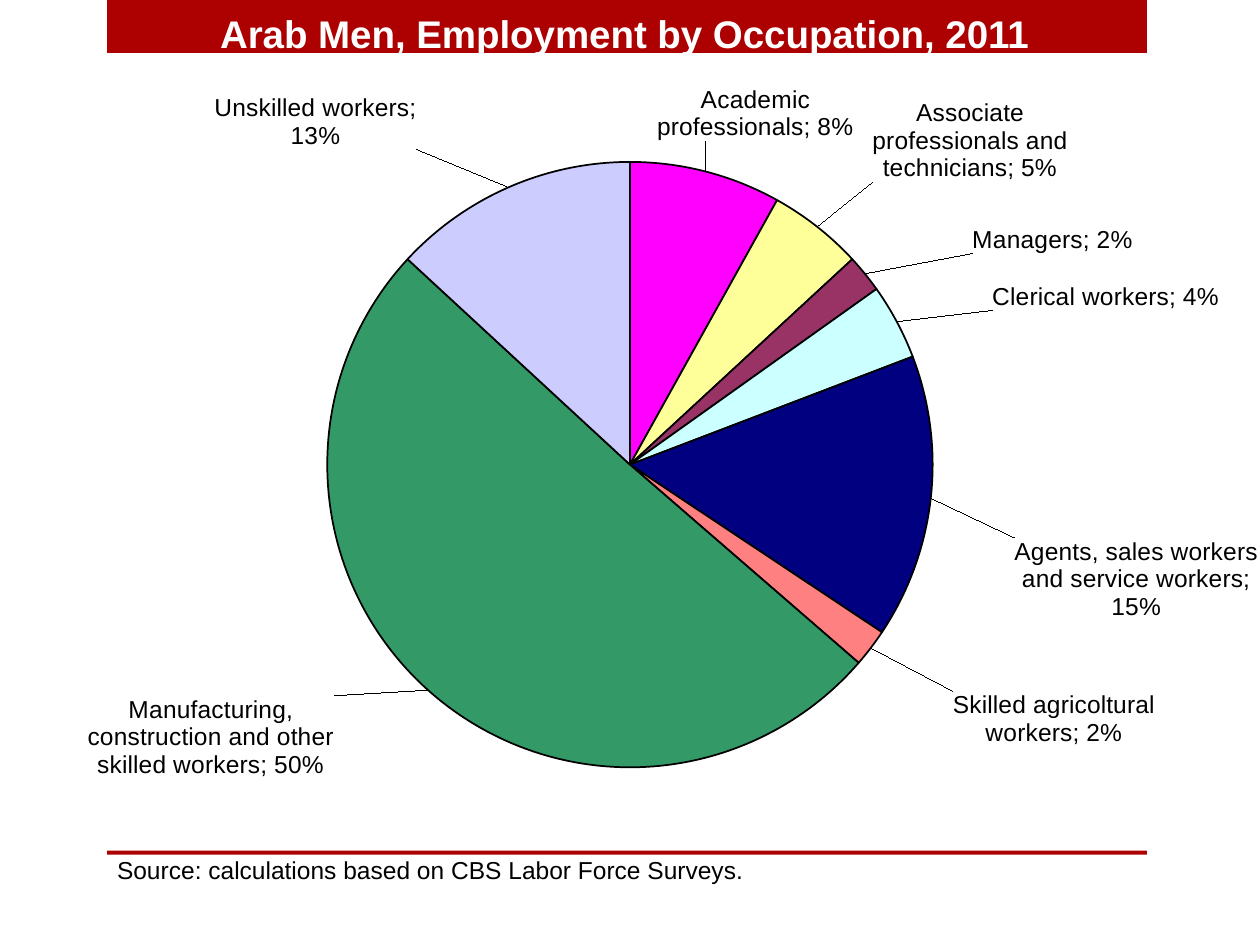
from dataclasses import dataclass

from lxml.etree import fromstring
from pptx import Presentation
from pptx.chart.data import CategoryChartData
from pptx.dml.color import RGBColor
from pptx.enum.chart import XL_CHART_TYPE, XL_LABEL_POSITION
from pptx.enum.shapes import MSO_SHAPE
from pptx.enum.text import PP_ALIGN
from pptx.util import Cm, Pt

FONT = "Arial"
RED, BLACK, WHITE = "AD0101", "000000", "FFFFFF"
NS = "http://schemas.openxmlformats.org/drawingml/2006/chart"


@dataclass
class Box:
    left: float
    top: float
    width: float
    height: float

    def place(self) -> tuple:
        return Cm(self.left), Cm(self.top), Cm(self.width), Cm(self.height)


@dataclass
class Slice:
    name: str
    share: float
    fill: str
    dx: float  # label shift, as part of the chart size
    dy: float


SLICES = [
    Slice("Academic professionals", 0.08, "FF00FF", -0.04, -0.03),
    Slice("Associate professionals and technicians", 0.05, "FFFF99", 0.04, -0.05),
    Slice("Managers", 0.02, "993366", 0.08, -0.02),
    Slice("Clerical workers", 0.04, "CCFFFF", 0.07, -0.01),
    Slice("Agents, sales workers and service workers", 0.15, "000080", 0.06, 0.05),
    Slice("Skilled agricoltural workers", 0.02, "FF8080", 0.06, 0.05),
    Slice("Manufacturing, construction and other skilled workers", 0.5, "339966", -0.07, 0),
    Slice("Unskilled workers", 0.13, "CCCCFF", -0.07, -0.04),
]


def color(code: str) -> RGBColor:
    return RGBColor.from_string(code)


def style(font, size: int, code: str, bold: bool = False) -> None:
    font.name, font.size, font.bold = FONT, Pt(size), bold
    font.color.rgb = color(code)


def node(body: str):
    return fromstring(body.replace(">", f' xmlns:c="{NS}">', 1))


def layout(inner: str):
    return node(f"<c:layout><c:manualLayout>{inner}</c:manualLayout></c:layout>")


def add_bar(slide, box: Box) -> None:
    bar = slide.shapes.add_shape(MSO_SHAPE.RECTANGLE, *box.place())
    bar.shadow.inherit = False
    bar.fill.solid()
    bar.fill.fore_color.rgb = color(RED)
    bar.line.fill.background()


def add_text(slide, box: Box, text: str, size: int, code: str,
             bold: bool = False, align=PP_ALIGN.LEFT) -> None:
    frame = slide.shapes.add_textbox(*box.place()).text_frame
    frame.word_wrap = True
    frame.text = text
    line = frame.paragraphs[0]
    line.alignment = align
    style(line.runs[0].font, size, code, bold)


def add_label(point, part: Slice) -> None:
    label = point.data_label
    style(label.font, 14, BLACK)
    label.position = XL_LABEL_POSITION.OUTSIDE_END


def tune_label(item, part: Slice) -> None:
    item.insert(1, layout(f'<c:x val="{part.dx}"/><c:y val="{part.dy}"/>'))
    item.insert(2, node('<c:numFmt formatCode="0%" sourceLinked="0"></c:numFmt>'))
    item.find(f"{{{NS}}}showCatName").set("val", "1")
    for old in item.findall(f"{{{NS}}}separator"):
        item.remove(old)
    item.append(node("<c:separator>; </c:separator>"))


def add_pie(slide, box: Box) -> None:
    data = CategoryChartData(number_format="0%")
    data.categories = [part.name for part in SLICES]
    data.add_series("Series 1", [part.share for part in SLICES])
    chart = slide.shapes.add_chart(XL_CHART_TYPE.PIE, *box.place(), data).chart
    chart.has_legend = chart.has_title = False
    style(chart.font, 10, BLACK)
    plot = chart.plots[0]
    plot.vary_by_categories = True
    pie = plot.series[0]

    # Labels for the whole series
    labels = pie.data_labels
    labels.show_value = labels.show_category_name = True
    labels.number_format, labels.number_format_is_linked = "0%", False
    labels.position = XL_LABEL_POSITION.OUTSIDE_END
    style(labels.font, 14, BLACK)

    # Slices and their shifted labels
    for num, part in enumerate(SLICES):
        point = pie.points[num]
        point.format.fill.solid()
        point.format.fill.fore_color.rgb = color(part.fill)
        point.format.line.color.rgb = color(BLACK)
        point.format.line.width = Pt(1)
        add_label(point, part)
    for item, part in zip(pie._element.xpath(".//c:dLbl"), SLICES):
        tune_label(item, part)

    # Leader lines
    group = pie._element.xpath("./c:dLbls")[0]
    for old in group.findall(f"{{{NS}}}showLeaderLines"):
        group.remove(old)
    group.append(node("<c:separator>; </c:separator>"))
    group.append(node('<c:showLeaderLines val="1"></c:showLeaderLines>'))

    # Fixed plot area
    area = chart._chartSpace.xpath(".//c:plotArea")[0]
    for old in area.findall(f"{{{NS}}}layout"):
        area.remove(old)
    area.insert(0, layout(
        '<c:layoutTarget val="inner"/><c:xMode val="edge"/><c:yMode val="edge"/>'
        '<c:x val="0.26"/><c:y val="0.1"/><c:w val="0.48"/><c:h val="0.78"/>'))


def main() -> None:
    deck = Presentation()
    deck.slide_width, deck.slide_height = Cm(25.4), Cm(19.05)
    slide = deck.slides.add_slide(deck.slide_layouts[6])

    # Red bar at the top and rule above the source
    add_bar(slide, Box(2.16, 0, 20.96, 1.07))
    add_bar(slide, Box(2.16, 17.15, 20.96, 0.08))

    add_pie(slide, Box(-0.1, 1.7, 25.6, 15.65))

    # Source and title
    add_text(slide, Box(2.11, 17.12, 19.41, 0.86),
             "Source: calculations based on CBS Labor Force Surveys.", 14, BLACK)
    add_text(slide, Box(1.7, 0.08, 21.79, 1.19),
             "Arab Men, Employment by Occupation, 2011", 22, WHITE, True, PP_ALIGN.CENTER)
    deck.save("out.pptx")


if __name__ == "__main__":
    main()
